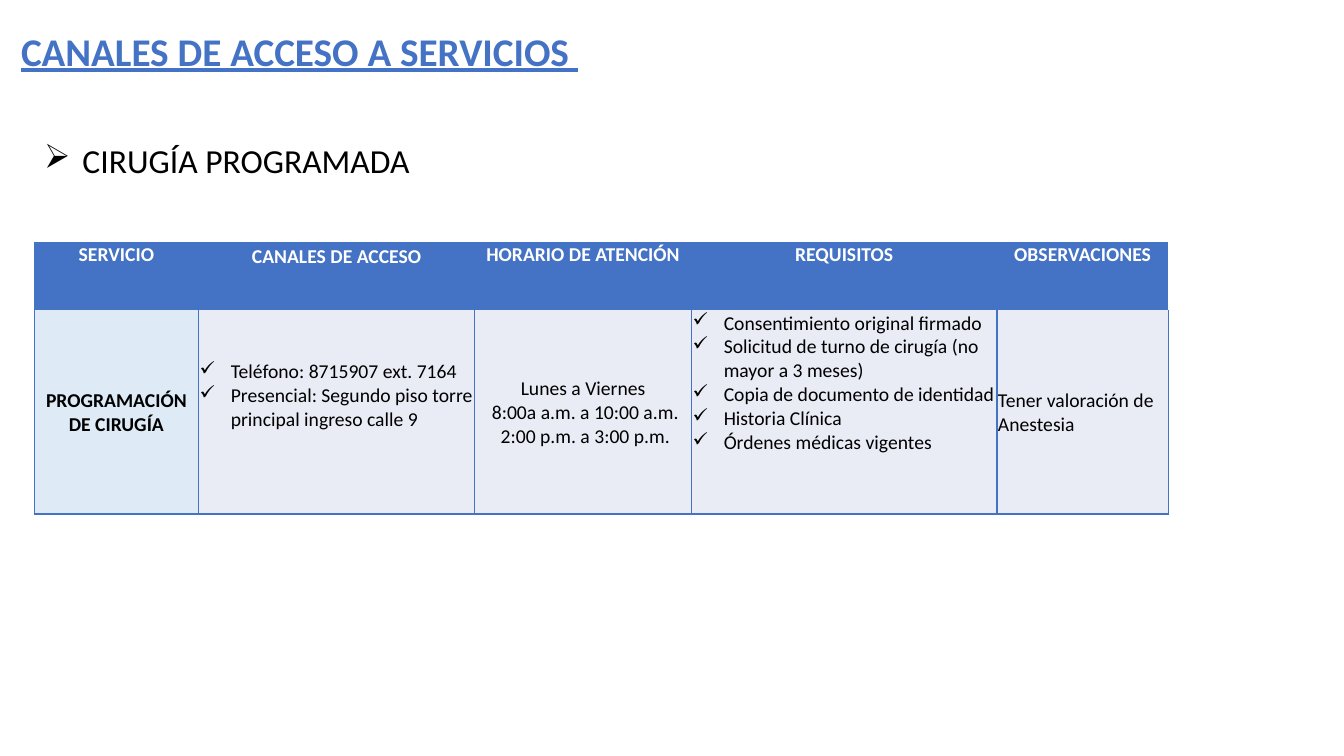
from lxml.etree import SubElement
from pptx import Presentation
from pptx.dml.color import RGBColor
from pptx.enum.text import MSO_ANCHOR, PP_ALIGN
from pptx.oxml.ns import qn
from pptx.util import Inches, Pt

BLUE = RGBColor(0x44, 0x72, 0xC4)
PALE_BLUE = RGBColor(0xDE, 0xEB, 0xF7)
PALE_GREY = RGBColor(0xE9, 0xEB, 0xF5)
WHITE = RGBColor(0xFF, 0xFF, 0xFF)
BLACK = RGBColor(0x00, 0x00, 0x00)
NO_TABLE_STYLE = "{2D5ABB26-0587-4C30-8999-92F81FD0307C}"
CHECK, ARROW = "✓", "➢"

COLUMN_SHARES = [12.23, 20.55, 16.13, 22.73, 12.75]
ROW_SHARES = [9.07, 26.93]
HEADINGS = ["SERVICIO", "CANALES DE ACCESO", "HORARIO DE ATENCIÓN",
            "REQUISITOS", "OBSERVACIONES"]
CHANNELS = ["Teléfono: 8715907 ext. 7164",
            "Presencial: Segundo piso torre principal ingreso calle 9"]
SCHEDULE = ["Lunes a Viernes", " 8:00a a.m. a 10:00 a.m.",
            " 2:00 p.m. a 3:00 p.m."]
REQUIREMENTS = ["Consentimiento original firmado",
                "Solicitud de turno de cirugía (no mayor a 3 meses)",
                "Copia de documento de identidad",
                "Historia Clínica",
                "Órdenes médicas vigentes"]


class ServiceSlide:
    """Holds the slide and its style; positions are percentages of its size."""

    font_name = "Calibri"

    def __init__(self, deck):
        self.deck = deck
        self.slide = deck.slides.add_slide(deck.slide_layouts[6])

    def across(self, share):
        return round(self.deck.slide_width * share / 100)

    def down(self, share):
        return round(self.deck.slide_height * share / 100)

    def area(self, left, top, width, height):
        return (self.across(left), self.down(top),
                self.across(width), self.down(height))

    def add_lines(self, frame, lines, size=14, color=BLACK, bold=False,
                  underline=False, align=PP_ALIGN.LEFT, bullet=None,
                  indent=0.31, spacing=None, after=0):
        for number, line in enumerate(lines):
            paragraph = frame.add_paragraph() if number else frame.paragraphs[0]
            if bullet:
                self.add_bullet(paragraph, bullet, indent)
            paragraph.alignment = align
            paragraph.space_after = Pt(after)
            if spacing:
                paragraph.line_spacing = spacing
            run = paragraph.add_run()
            run.text = line
            run.font.name = self.font_name
            run.font.size = Pt(size)
            run.font.bold = bold
            run.font.underline = underline
            run.font.color.rgb = color

    def add_bullet(self, paragraph, symbol, indent):
        properties = paragraph._p.get_or_add_pPr()
        properties.set("marL", str(Inches(indent)))
        properties.set("indent", str(-Inches(indent)))
        SubElement(properties, qn("a:buChar"), char=symbol)

    def add_text(self, area, line, anchor=MSO_ANCHOR.TOP, **style):
        frame = self.slide.shapes.add_textbox(*self.area(*area)).text_frame
        frame.word_wrap = True
        frame.vertical_anchor = anchor
        self.add_lines(frame, [line], **style)

    def add_table(self, left, top, column_shares, row_shares):
        area = self.area(left, top, sum(column_shares), sum(row_shares))
        table = self.slide.shapes.add_table(
            len(row_shares), len(column_shares), *area).table
        table._tbl.tblPr.find(qn("a:tableStyleId")).text = NO_TABLE_STYLE
        for column, share in zip(table.columns, column_shares):
            column.width = self.across(share)
        for row, share in zip(table.rows, row_shares):
            row.height = self.down(share)
        return table

    def fill_cell(self, cell, lines, fill, anchor=MSO_ANCHOR.TOP,
                  top_margin=0.01, bordered=True, **style):
        cell.margin_left = cell.margin_right = Inches(0.01)
        cell.margin_top, cell.margin_bottom = Inches(top_margin), 0
        cell.vertical_anchor = anchor
        if bordered:
            self.add_borders(cell)
        cell.fill.solid()
        cell.fill.fore_color.rgb = fill
        self.add_lines(cell.text_frame, lines, **style)

    def add_borders(self, cell):
        """Outline the left, right and bottom edges."""
        properties = cell._tc.get_or_add_tcPr()
        for edge in ("a:lnL", "a:lnR", "a:lnB"):
            line = SubElement(properties, qn(edge), w=str(Pt(1)))
            solid = SubElement(line, qn("a:solidFill"))
            SubElement(solid, qn("a:srgbClr"), val=str(BLUE))


def main():
    deck = Presentation()
    deck.slide_width, deck.slide_height = Inches(13.33), Inches(7.5)
    page = ServiceSlide(deck)

    page.add_text((0.83, 2.13, 68.64, 8.4), "CANALES DE ACCESO A SERVICIOS ",
                  anchor=MSO_ANCHOR.BOTTOM, size=28, color=BLUE, bold=True,
                  underline=True, spacing=0.9)
    page.add_text((2.55, 17.87, 39.16, 6.67), "CIRUGÍA PROGRAMADA", size=24,
                  bullet=ARROW, indent=0.38)

    services = page.add_table(2.55, 32, COLUMN_SHARES, ROW_SHARES)
    for column, heading in enumerate(HEADINGS):
        extra = {"spacing": 1.07, "after": 8} if column == 1 else {}
        page.fill_cell(services.cell(0, column), [heading], BLUE,
                       bordered=False, color=WHITE, bold=True,
                       align=PP_ALIGN.CENTER, **extra)

    middle = {"anchor": MSO_ANCHOR.MIDDLE}
    centered = {**middle, "align": PP_ALIGN.CENTER}
    details = [
        (["PROGRAMACIÓN DE CIRUGÍA"], PALE_BLUE, {**centered, "bold": True}),
        (CHANNELS, PALE_GREY, {"bullet": CHECK, "top_margin": 0.49}),
        (SCHEDULE, PALE_GREY, centered),
        (REQUIREMENTS, PALE_GREY, {"bullet": CHECK}),
        (["Tener valoración de Anestesia"], PALE_GREY, middle),
    ]
    for column, (lines, fill, style) in enumerate(details):
        page.fill_cell(services.cell(1, column), lines, fill, **style)

    deck.save("out.pptx")


if __name__ == "__main__":
    main()
